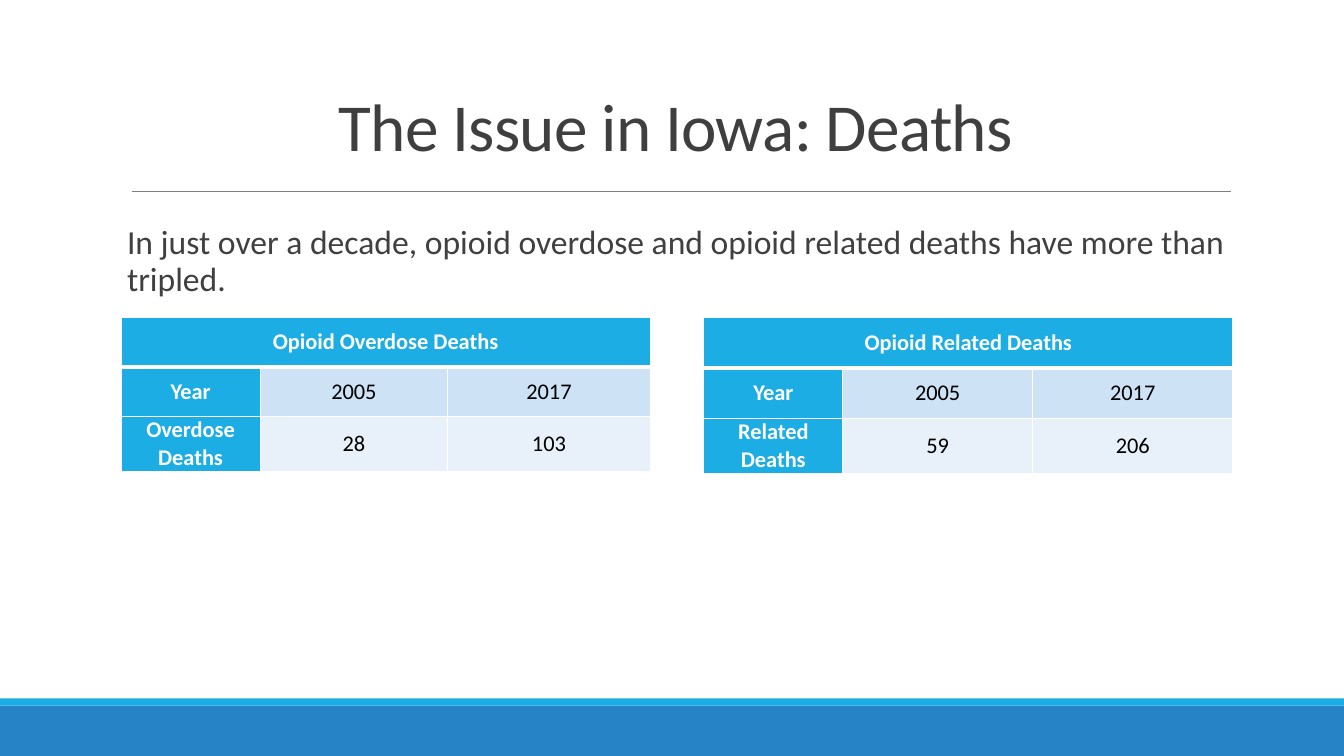
from lxml.etree import SubElement
from pptx import Presentation
from pptx.dml.color import RGBColor as RGB
from pptx.enum.shapes import MSO_CONNECTOR as LINE, MSO_SHAPE as SHAPE
from pptx.enum.text import MSO_ANCHOR as ANCHOR, MSO_AUTO_SIZE as FIT, PP_ALIGN as ALIGN
from pptx.oxml.ns import qn
from pptx.util import Inches, Pt

COLORS = {
    "blue": "2683C6", "cyan": "1CADE4", "pale": "CDE3F5", "faint": "E8F1FA",
    "rule": "808080", "title": "3F3F3F", "body": "404040",
    "white": "FFFFFF", "black": "000000",
}


def write(para, text, size, color, bold=False):
    """Add one formatted run to a paragraph."""
    run = para.add_run()
    run.text = text
    font = run.font
    font.name, font.size, font.bold = "Calibri", Pt(size), bold
    font.color.rgb = RGB.from_string(COLORS[color])
    return run


def border(cell, side, width):
    """Draw a white border on one side (L, R, T or B) of a cell."""
    line = SubElement(cell._tc.get_or_add_tcPr(), qn(f"a:ln{side}"), w=str(Pt(width)))
    fill = SubElement(line, qn("a:solidFill"))
    SubElement(fill, qn("a:srgbClr"), val=COLORS["white"])


deck = Presentation()
deck.slide_width, deck.slide_height = Inches(13.33), Inches(7.5)
slide = deck.slides.add_slide(deck.slide_layouts[1])
shapes = slide.shapes

# Footer bands and title rule
for top, height, color in ((7, 0.5, "blue"), (6.93, 0.07, "cyan")):
    band = shapes.add_shape(SHAPE.RECTANGLE, 0, Inches(top), deck.slide_width, Inches(height))
    band.shadow.inherit = False
    band.fill.solid()
    band.fill.fore_color.rgb = RGB.from_string(COLORS[color])
    band.line.fill.background()

rule = shapes.add_connector(LINE.STRAIGHT, Inches(1.31), Inches(1.9), Inches(12.21), Inches(1.9))
rule.line.color.rgb = RGB.from_string(COLORS["rule"])
rule.line.width = Pt(0.5)
SubElement(rule._element.spPr, qn("a:effectLst"))

# Title and lead sentence
title, body = shapes.title, slide.placeholders[1]
for holder, top, height in ((title, 0.34, 1.35), (body, 2.19, 4.62)):
    holder.left, holder.top = Inches(1.2), Inches(top)
    holder.width, holder.height = Inches(11), Inches(height)
    holder.text_frame.word_wrap = True
    holder.text_frame.auto_size = FIT.NONE

title.text_frame.vertical_anchor = ANCHOR.BOTTOM
head = title.text_frame.paragraphs[0]
head.alignment, head.line_spacing = ALIGN.CENTER, 0.85
run = write(head, "The Issue in Iowa: Deaths", 48, "title")
run.font._element.set("spc", "-50")

body.text_frame.margin_left = body.text_frame.margin_right = 0
body.text_frame.vertical_anchor = ANCHOR.TOP
lead = body.text_frame.paragraphs[0]
props = lead._p.get_or_add_pPr()
props.set("marL", str(Inches(0.06)))
props.set("indent", "0")
SubElement(props, qn("a:buNone"))
lead.alignment, lead.line_spacing = ALIGN.LEFT, 0.9
lead.space_before, lead.space_after = Pt(0), Pt(2)
write(lead, "In just over a decade, opioid overdose and opioid related deaths "
      "have more than tripled.", 24, "body")

# Death tables
TABLES = (
    ("Overdose", 1.2, (1.38, 1.86, 2.01), (0.49, 0.49, 0.55), ("28", "103")),
    ("Related", 6.98, (1.38, 1.88, 1.99), (0.5, 0.5, 0.54), ("59", "206")),
)
for kind, left, widths, heights, counts in TABLES:
    frame = shapes.add_table(3, 3, Inches(left), Inches(3.15),
                             Inches(sum(widths)), Inches(sum(heights)))
    table = frame.table
    for col, width in zip(table.columns, widths):
        col.width = Inches(width)
    for row, height in zip(table.rows, heights):
        row.height = Inches(height)
    table.cell(0, 0).merge(table.cell(0, 2))

    rows = ((f"Opioid {kind} Deaths", "", ""),
            ("Year", "2005", "2017"),
            (f"{kind} Deaths", *counts))
    for r, texts in enumerate(rows):
        for c, text in enumerate(texts):
            cell = table.cell(r, c)
            label = r == 0 or c == 0
            for side in "LRTB":
                thick = (r, side) in ((0, "B"), (1, "T"))
                border(cell, side, 3 if thick else 1)
            cell.fill.solid()
            shade = "cyan" if label else ("pale" if r == 1 else "faint")
            cell.fill.fore_color.rgb = RGB.from_string(COLORS[shade])
            cell.vertical_anchor = ANCHOR.MIDDLE
            cell.margin_left = cell.margin_right = Inches(0.07)
            cell.margin_top = cell.margin_bottom = 0
            if text:
                para = cell.text_frame.paragraphs[0]
                para.alignment = ALIGN.CENTER
                write(para, text, 16, "white" if label else "black", label)

deck.save("out.pptx")
